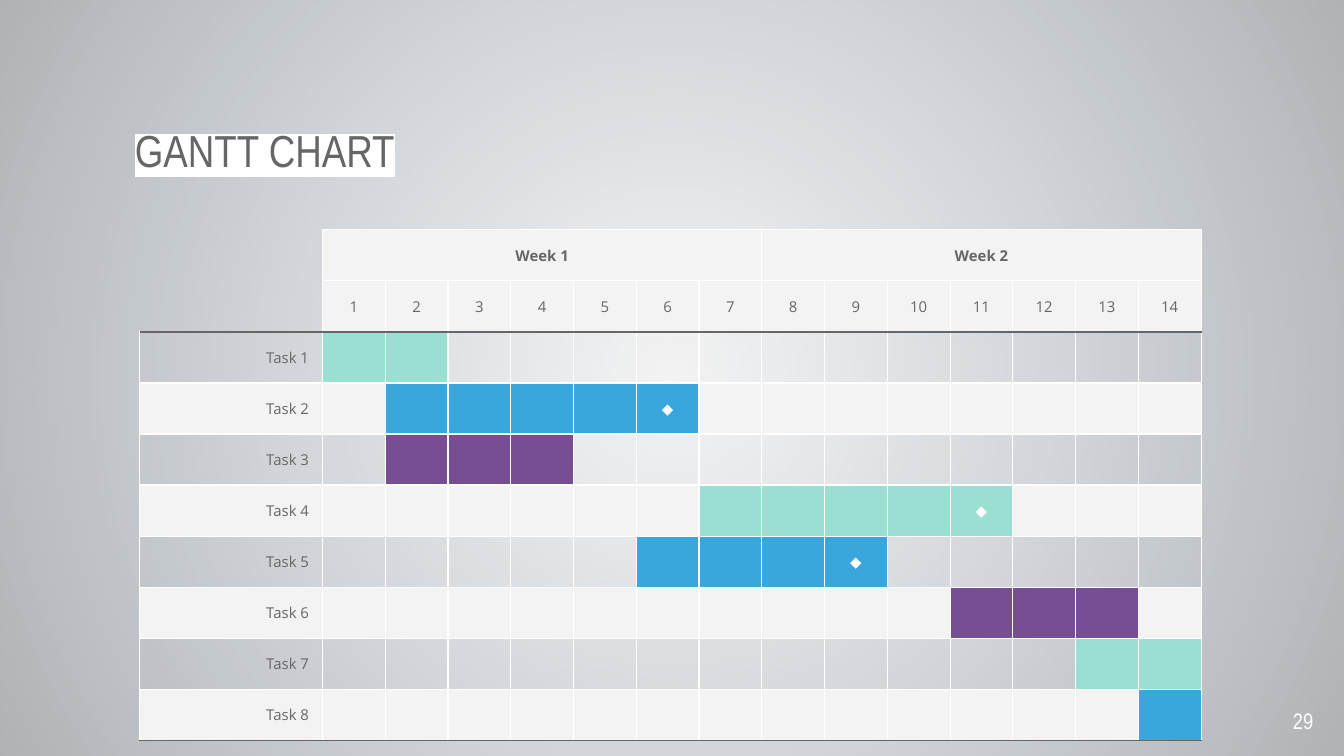
from dataclasses import dataclass
from typing import NamedTuple

from lxml import etree
from pptx import Presentation
from pptx.dml.color import RGBColor
from pptx.enum.shapes import MSO_SHAPE
from pptx.enum.text import MSO_ANCHOR, PP_ALIGN
from pptx.oxml import parse_xml
from pptx.oxml.ns import qn
from pptx.util import Inches, Pt

LEFT, CENTER, RIGHT = PP_ALIGN.LEFT, PP_ALIGN.CENTER, PP_ALIGN.RIGHT
TOP, MIDDLE = MSO_ANCHOR.TOP, MSO_ANCHOR.MIDDLE
RECTANGLE = MSO_SHAPE.RECTANGLE
NS = "http://schemas.openxmlformats.org/drawingml/2006/main"
NO_STYLE = "{2D5ABB26-0587-4C30-8999-92F81FD0307C}"


@dataclass(frozen=True)
class Theme:
    paper: str = "F3F3F3"
    ink: str = "666666"
    white: str = "FFFFFF"
    mint: str = "9BDED2"
    blue: str = "39A6DE"
    purple: str = "774E92"
    glow: str = "073763"
    edge: str = "010B15"
    heading: str = "Arial Narrow"
    body: str = "Open Sans"
    title_size: float = 24
    page_size: float = 12
    cell_size: float = 8
    border: float = 0.75


class Box(NamedTuple):
    """Left, top, width and height in percent of the slide."""
    x: float
    y: float
    w: float
    h: float


@dataclass(frozen=True)
class Task:
    first: int
    last: int
    color: str
    milestone: bool = False


T = Theme()
WIDTH = Inches(10)
HEIGHT = WIDTH * 9 // 16
WEEKS, WEEK_DAYS = 2, 7
DAYS = WEEKS * WEEK_DAYS
HEAD_ROWS = 2
LABEL_WIDTH, DAY_WIDTH, ROW_HEIGHT = Inches(1.36), Inches(6.54) // DAYS, Inches(0.38)
TASKS = [
    Task(1, 2, T.mint), Task(2, 6, T.blue, True), Task(2, 4, T.purple),
    Task(7, 11, T.mint, True), Task(6, 9, T.blue, True), Task(11, 13, T.purple),
    Task(13, 14, T.mint), Task(14, 14, T.blue),
]
ROWS = HEAD_ROWS + len(TASKS)


def place(box: Box) -> list[int]:
    return [round(share * side / 100)
            for share, side in zip(box, (WIDTH, HEIGHT, WIDTH, HEIGHT))]


def write(tf, text: str, size: float, face: str, color: str, align, bold: bool = False):
    p = tf.paragraphs[0]
    p.alignment = align
    r = p.add_run()
    r.text = text
    for name, value in {"size": Pt(size), "name": face, "bold": bold}.items():
        setattr(r.font, name, value)
    r.font.color.rgb = RGBColor.from_string(color)
    return r


def add_text(slide, box: Box, text: str, size: float, color: str, align):
    tf = slide.shapes.add_textbox(*place(box)).text_frame
    margins = dict.fromkeys(
        ("margin_left", "margin_top", "margin_right", "margin_bottom"), Inches(0.1))
    for name, value in {"word_wrap": True, "vertical_anchor": TOP, **margins}.items():
        setattr(tf, name, value)
    return write(tf, text, size, T.heading, color, align)


def highlight(r, color: str) -> None:
    mark = parse_xml(f'<a:highlight xmlns:a="{NS}"><a:srgbClr val="{color}"/></a:highlight>')
    r.font._element.find(qn("a:solidFill")).addnext(mark)


def add_vignette(slide) -> None:
    sp = slide.shapes.add_shape(RECTANGLE, 0, 0, WIDTH, HEIGHT)
    sp.shadow.inherit = False
    sp.line.fill.background()
    stops = "".join(
        f'<a:gs pos="{pos}"><a:srgbClr val="{color}"><a:alpha val="{alpha}"/></a:srgbClr></a:gs>'
        for pos, color, alpha in ((0, T.glow, 0), (100000, T.edge, 28000)))
    sp._element.spPr.find(qn("a:prstGeom")).addnext(parse_xml(
        f'<a:gradFill xmlns:a="{NS}"><a:gsLst>{stops}</a:gsLst><a:path path="circle">'
        '<a:fillToRect l="50000" t="50000" r="50000" b="50000"/></a:path></a:gradFill>'))


def borders(row: int, col: int) -> dict[str, str]:
    top = T.ink if row == HEAD_ROWS else T.white
    bottom = T.ink if row in (HEAD_ROWS - 1, ROWS - 1) else T.white
    sides = {"L": T.white, "R": T.white, "T": top, "B": bottom}
    if col == 0 and row < HEAD_ROWS:
        # The empty corner shows only the edges it shares with the grid
        keep = "R" if row == 0 else "RB"
        sides = {side: sides[side] for side in keep}
    return sides


def style_cell(cell, row: int, col: int, fill: str | None) -> None:
    tcPr = cell._tc.get_or_add_tcPr()
    for side, color in borders(row, col).items():
        tcPr.append(parse_xml(
            f'<a:ln{side} xmlns:a="{NS}" w="{Pt(T.border)}"><a:solidFill>'
            f'<a:srgbClr val="{color}"/></a:solidFill></a:ln{side}>'))
    if fill:
        cell.fill.solid()
        cell.fill.fore_color.rgb = RGBColor.from_string(fill)
    else:
        cell.fill.background()
    cell.vertical_anchor = MIDDLE
    # Empty cells keep the small type size so that rows do not grow
    end = etree.SubElement(cell.text_frame.paragraphs[0]._p, qn("a:endParaRPr"))
    end.set("sz", str(round(T.cell_size * 100)))


def cell_fill(row: int, col: int) -> str | None:
    if row < HEAD_ROWS:
        return T.paper if col else None
    task = TASKS[row - HEAD_ROWS]
    if task.first <= col <= task.last:
        return task.color
    return T.paper if row % 2 else None


def add_gantt(slide, x: int, y: int) -> None:
    frame = slide.shapes.add_table(
        ROWS, DAYS + 1, x, y, LABEL_WIDTH + DAYS * DAY_WIDTH, ROWS * ROW_HEIGHT)
    table = frame.table
    table._tbl.tblPr.find(qn("a:tableStyleId")).text = NO_STYLE
    table.first_row = table.horz_banding = False
    for i, column in enumerate(table.columns):
        column.width = DAY_WIDTH if i else LABEL_WIDTH
    for row in table.rows:
        row.height = ROW_HEIGHT

    def put(row: int, col: int, text: str, color=T.ink, align=CENTER, bold=False) -> None:
        write(table.cell(row, col).text_frame, text, T.cell_size, T.body, color, align, bold)

    # Week and day headings
    for week in range(WEEKS):
        first = 1 + week * WEEK_DAYS
        table.cell(0, first).merge(table.cell(0, first + WEEK_DAYS - 1))
        put(0, first, f"Week {week + 1}", bold=True)
    for day in range(1, DAYS + 1):
        put(1, day, str(day))

    # Task labels and milestones
    for i, task in enumerate(TASKS):
        put(HEAD_ROWS + i, 0, f"Task {i + 1}", align=RIGHT)
        if task.milestone:
            put(HEAD_ROWS + i, task.last, "◆", T.white)

    # Borders, bars and bands
    for row in range(ROWS):
        for col in range(DAYS + 1):
            style_cell(table.cell(row, col), row, col, cell_fill(row, col))


def main() -> None:
    prs = Presentation()
    prs.slide_width, prs.slide_height = WIDTH, HEIGHT
    slide = prs.slides.add_slide(prs.slide_layouts[6])

    # Background
    slide.background.fill.solid()
    slide.background.fill.fore_color.rgb = RGBColor.from_string(T.paper)
    add_vignette(slide)

    # Title and page number
    r = add_text(slide, Box(9.05, 14.4, 44.9, 13.7), "GANTT CHART",
                 T.title_size, T.ink, LEFT)
    highlight(r, T.white)
    add_text(slide, Box(92.7, 91.8, 6, 6.8), "29", T.page_size, T.white, RIGHT)

    # Schedule
    add_gantt(slide, *place(Box(10.4, 30.4, 0, 0))[:2])
    prs.save("out.pptx")


if __name__ == "__main__":
    main()
